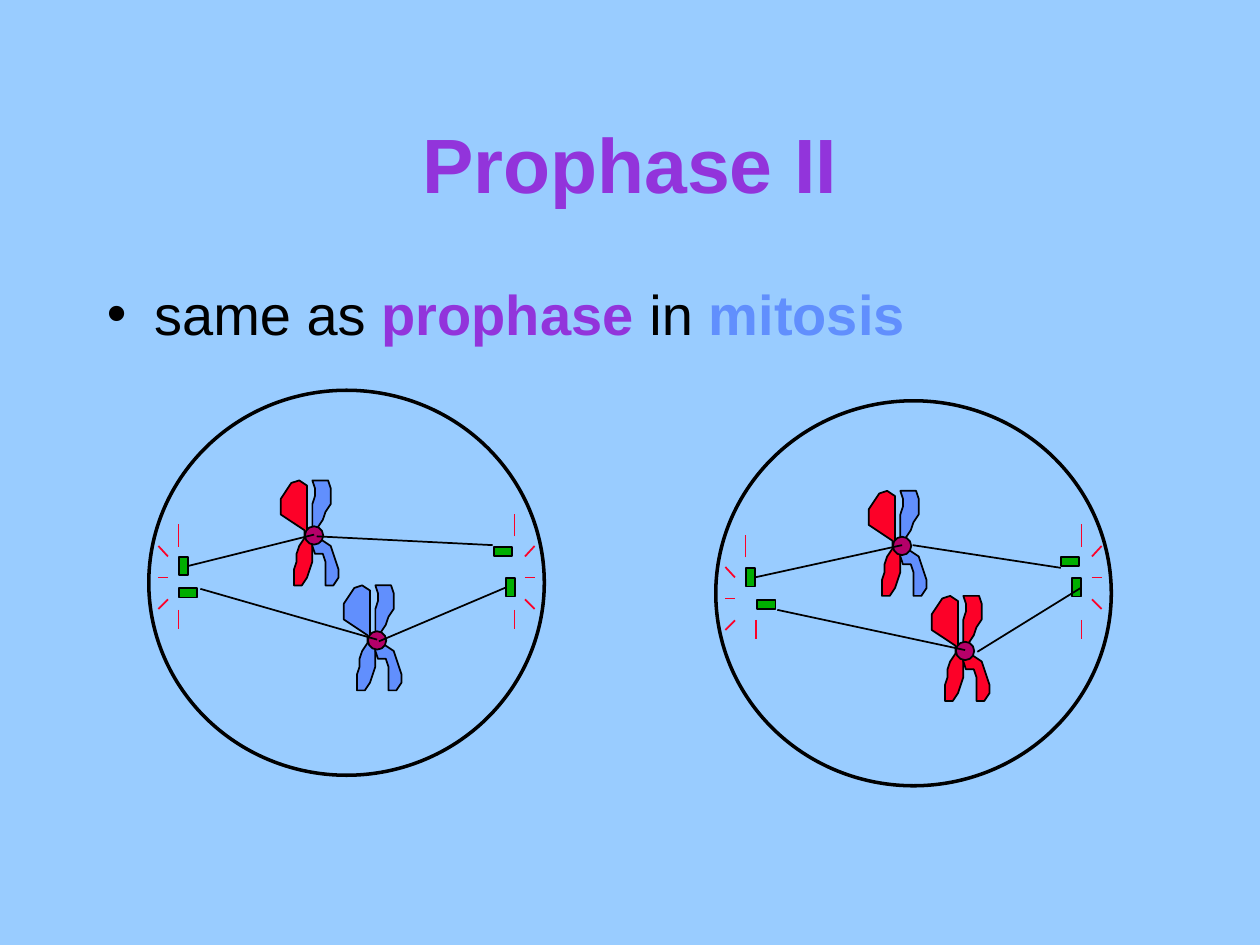
import dataclasses

import pptx
import pptx.dml.color
import pptx.enum.shapes
import pptx.enum.text
import pptx.oxml.ns
import pptx.util
from lxml import etree


@dataclasses.dataclass(frozen=True)
class Theme:
    """Colours, font and type sizes in points."""
    font: str = "Arial"
    title_size: int = 44
    body_size: int = 32
    background: str = "99CCFF"
    black: str = "000000"
    purple: str = "9234DB"
    blue: str = "618FFD"
    red: str = "FC0128"
    green: str = "00AE00"
    magenta: str = "B50069"


THEME = Theme()
GRID = 1.5
CENTROMERE_SIZE = 10.5
CENTRIOLE_LONG, CENTRIOLE_SHORT = 10.5, 5.25
LEFT_CHROMATID = [
    (0, 0), (-3, -1), (-3, -19), (-6, -21), (-9, -20), (-13, -14), (-13, -8),
    (-4, -2), (-4, 1), (-6, 4), (-7, 7), (-7, 10), (-8, 13), (-8, 19),
    (-5, 19), (-3, 16), (-1, 10), (-1, 1),
]
RIGHT_CHROMATID = [
    (0, 0), (-1, -3), (-1, -12), (0, -15), (0, -18), (-1, -21), (5, -21),
    (6, -18), (6, -12), (4, -9), (3, -6), (1, -3), (0, 0), (6, 4), (9, 13),
    (9, 16), (7, 19), (4, 19), (4, 10), (3, 7), (0, 7), (-1, 4), (-1, 1),
]
CHROMOSOMES = [
    (216, 366, THEME.blue, THEME.blue),
    (516, 312, THEME.red, THEME.blue),
    (180, 306, THEME.red, THEME.blue),
    (552, 372, THEME.red, THEME.red),
]
CELLS = [
    {
        "outline": (85, 223, 226, 220),
        "upright": [(102.2, 318.2), (289, 330.5)],
        "flat": [(102.2, 336.2), (282.2, 312.5)],
        "asters": [(102, -1, 330, 312.5, 102, 348.5), (294, 1, 330, 306.5, 294, 348.5)],
        "fibres": [(108.5, 324.5, 179.5, 305.5), (181, 306.5, 281.5, 311.5),
                   (114.5, 336.5, 215.5, 365.5), (216.5, 366.5, 287.5, 335.5)],
        "last_side": 1,
    },
    {
        "outline": (409, 229, 226, 220),
        "upright": [(426.2, 324.7), (612.7, 330.5)],
        "flat": [(432.7, 342.7), (606.2, 318.2)],
        "asters": [(426, -1, 342, 318.5, 432, 354.2), (618, 1, 330, 312.5, 618, 354.2)],
        "fibres": [(432.5, 330.5, 515.5, 311.5), (606.2, 324.5, 521.5, 311.5),
                   (444.2, 348.5, 551.5, 371.5), (558.5, 372.5, 618, 335.5)],
        "last_side": 3,
    },
]


class Canvas:
    """Draws styled elements, measured in points, on one slide."""

    def __init__(self, slide, theme):
        self.slide = slide
        self.theme = theme
        background = slide.background.fill
        background.solid()
        background.fore_color.rgb = self.color(theme.background)

    def color(self, value):
        """Return a colour object."""
        return pptx.dml.color.RGBColor.from_string(value)

    def style(self, shape, fill, width=1):
        """Set fill and black outline."""
        shape.shadow.inherit = False
        if fill:
            shape.fill.solid()
            shape.fill.fore_color.rgb = self.color(fill)
        else:
            shape.fill.background()
        shape.line.color.rgb = self.color(self.theme.black)
        shape.line.width = pptx.util.Pt(width)
        return shape

    def text(self, box, pieces, size):
        """Add a text box of (text, colour, bold) pieces and return it."""
        shape = self.slide.shapes.add_textbox(*map(pptx.util.Pt, box))
        shape.text_frame.word_wrap = True
        paragraph = shape.text_frame.paragraphs[0]
        for text, color, bold in pieces:
            run = paragraph.add_run()
            run.text = text
            run.font.name = self.theme.font
            run.font.size = pptx.util.Pt(size)
            run.font.bold = bold
            run.font.color.rgb = self.color(color)
        return shape

    def title(self, box, text):
        """Add the centred title."""
        shape = self.text(box, [(text, self.theme.purple, True)], self.theme.title_size)
        shape.text_frame.vertical_anchor = pptx.enum.text.MSO_ANCHOR.MIDDLE
        shape.text_frame.paragraphs[0].alignment = pptx.enum.text.PP_ALIGN.CENTER

    def bullet(self, box, pieces):
        """Add a bulleted paragraph."""
        shape = self.text(box, pieces, self.theme.body_size)
        paragraph = shape.text_frame.paragraphs[0]
        paragraph.space_before = pptx.util.Pt(0.2 * self.theme.body_size)
        properties = paragraph._p.get_or_add_pPr()
        properties.set("marL", str(pptx.util.Pt(27)))
        properties.set("indent", str(pptx.util.Pt(-27)))
        qualify = pptx.oxml.ns.qn
        etree.SubElement(properties, qualify("a:buFont"), typeface=self.theme.font)
        etree.SubElement(properties, qualify("a:buChar"), char="•")

    def rectangle(self, box, fill):
        """Add an outlined rectangle."""
        kind = pptx.enum.shapes.MSO_SHAPE.RECTANGLE
        return self.style(self.slide.shapes.add_shape(kind, *map(pptx.util.Pt, box)), fill)

    def ellipse(self, box, fill=None, width=1):
        """Add an outlined ellipse."""
        kind = pptx.enum.shapes.MSO_SHAPE.OVAL
        return self.style(self.slide.shapes.add_shape(kind, *map(pptx.util.Pt, box)), fill, width)

    def line(self, ends, color):
        """Add a straight line."""
        kind = pptx.enum.shapes.MSO_CONNECTOR.STRAIGHT
        connector = self.slide.shapes.add_connector(kind, *map(pptx.util.Pt, ends))
        connector.line.color.rgb = self.color(color)
        connector.line.width = pptx.util.Pt(1)
        etree.SubElement(connector._element.spPr, pptx.oxml.ns.qn("a:effectLst"))
        return connector

    def outline(self, x, y, points, fill):
        """Add a closed outline of grid points around an origin."""
        builder = self.slide.shapes.build_freeform(*points[0], scale=pptx.util.Pt(GRID))
        builder.add_line_segments(points[1:], close=True)
        self.style(builder.convert_to_shape(pptx.util.Pt(x), pptx.util.Pt(y)), fill)

    def chromosome(self, x, y, left_color, right_color):
        """Add two chromatids joined by a centromere."""
        self.outline(x, y, LEFT_CHROMATID, left_color)
        self.outline(x, y, RIGHT_CHROMATID, right_color)
        radius = CENTROMERE_SIZE / 2
        box = (x - 0.5 - radius, y - radius, CENTROMERE_SIZE, CENTROMERE_SIZE)
        self.ellipse(box, self.theme.magenta)

    def aster(self, x, side, middle, top, bottom_x, bottom):
        """Add the five rays around a pole."""
        inner, outer = x + side * 6, x + side * 11.5
        for start, end in [(-12, -18), (0, 0), (12.5, 18)]:
            self.line((inner, middle + start, outer, middle + end), self.theme.red)
        self.line((x, top, x, top - 13), self.theme.red)
        self.line((bottom_x, bottom, bottom_x, bottom + 11), self.theme.red)

    def spindle(self, cell):
        """Add centrioles, asters and fibres of a cell."""
        upright = [self.rectangle((x, y, CENTRIOLE_SHORT, CENTRIOLE_LONG), self.theme.green)
                   for x, y in cell["upright"]]
        for x, y in cell["flat"]:
            self.rectangle((x, y, CENTRIOLE_LONG, CENTRIOLE_SHORT), self.theme.green)
        for aster in cell["asters"]:
            self.aster(*aster)
        fibres = [self.line(ends, self.theme.black) for ends in cell["fibres"]]
        fibres[0].begin_connect(upright[0], 3)
        fibres[-1].end_connect(upright[1], cell["last_side"])


def main():
    """Build and save the slide."""
    presentation = pptx.Presentation()
    presentation.slide_width = pptx.util.Pt(720)
    presentation.slide_height = pptx.util.Pt(540)
    canvas = Canvas(presentation.slides.add_slide(presentation.slide_layouts[6]), THEME)
    canvas.title((54, 48, 612, 90), "Prophase II")
    canvas.bullet((54, 156, 612, 324), [
        ("same as ", THEME.black, False),
        ("prophase", THEME.purple, True),
        (" in ", THEME.black, False),
        ("mitosis", THEME.blue, True),
    ])
    for chromosome in CHROMOSOMES:
        canvas.chromosome(*chromosome)
    for cell in CELLS:
        canvas.ellipse(cell["outline"], width=2)
        canvas.spindle(cell)
    presentation.save("out.pptx")


if __name__ == "__main__":
    main()
